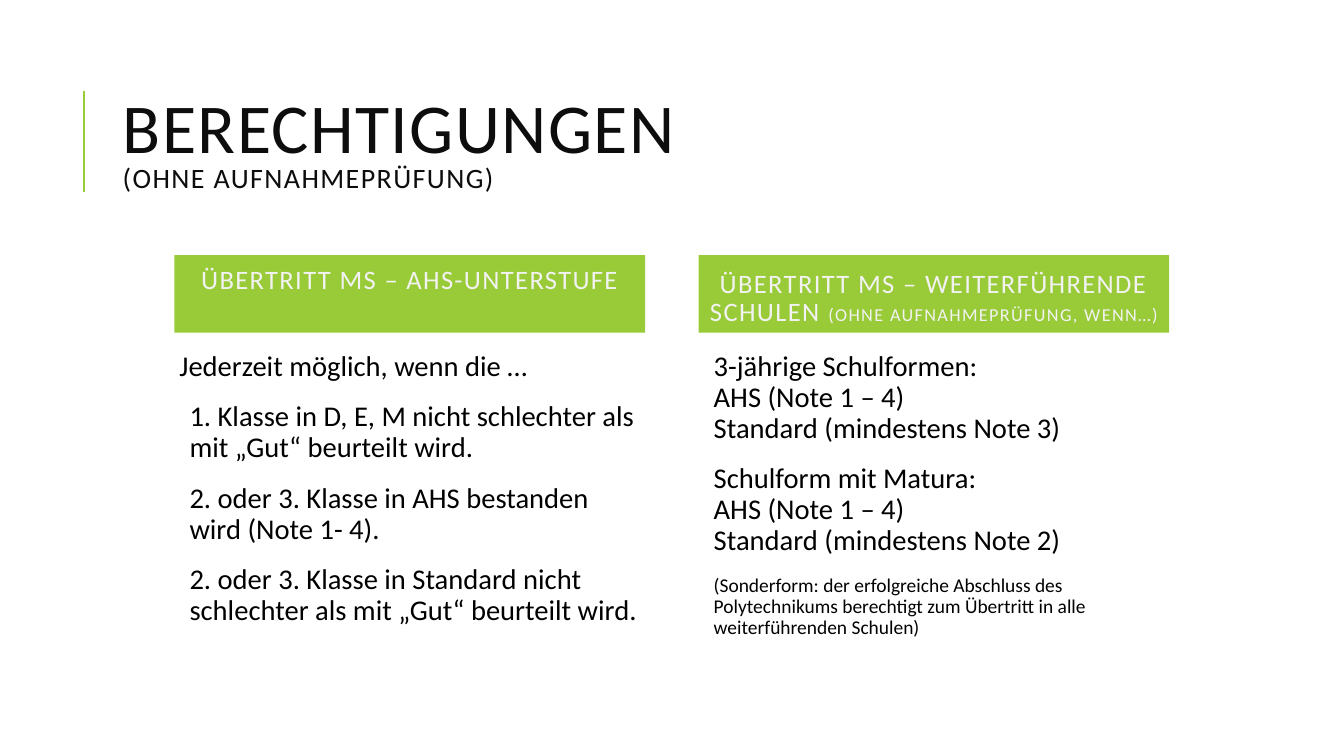
from pptx import Presentation
from pptx.dml.color import RGBColor
from pptx.enum.shapes import MSO_CONNECTOR, MSO_SHAPE
from pptx.enum.text import MSO_ANCHOR, PP_ALIGN
from pptx.oxml.ns import qn
from pptx.util import Pt

COLORS = {"green": "99CB38", "header": "F2F2F2", "title": "0D0D0D", "body": "000000"}
INSET = 3.6
HEADER_HEIGHT = 55.4
BODY_TOP = 65.5
BODY_SIZE = 20.4

ENTRY_CONDITIONS = [
    ("Jederzeit möglich, wenn die …", BODY_SIZE, 0),
    ("1. Klasse in D, E, M nicht schlechter als mit „Gut“ beurteilt wird.", BODY_SIZE, 7.2),
    ("2. oder 3. Klasse in AHS bestanden wird (Note 1- 4).", BODY_SIZE, 7.2),
    ("2. oder 3. Klasse in Standard nicht schlechter als mit „Gut“ beurteilt wird.",
     BODY_SIZE, 7.2),
]
SCHOOL_TYPES = [
    ("3-jährige Schulformen:\vAHS (Note 1 – 4)\vStandard (mindestens Note 3)", BODY_SIZE, 7.2),
    ("Schulform mit Matura:\vAHS (Note 1 – 4)\vStandard (mindestens Note 2)", BODY_SIZE, 7.2),
    ("(Sonderform: der erfolgreiche Abschluss des Polytechnikums berechtigt zum Übertritt "
     "in alle weiterführenden Schulen)", 13.9, 7.2),
]


def format_run(run, size, color, letter_spacing=0):
    run.font.name = "Calibri"
    run.font.size = Pt(size)
    run.font.color.rgb = RGBColor.from_string(COLORS[color])
    if letter_spacing:
        run.font._element.set("spc", str(letter_spacing * 100))


def set_frame(frame, anchor, side, vertical, bottom=None):
    """Wrap the text and set its anchor and insets."""
    frame.word_wrap = True
    frame.vertical_anchor = anchor
    frame.margin_left = frame.margin_right = Pt(side)
    frame.margin_top = Pt(vertical)
    frame.margin_bottom = Pt(vertical if bottom is None else bottom)


def add_title(slide, left, top, width, height):
    """Add the two-line title and the accent line to its left."""
    accent = slide.shapes.add_connector(
        MSO_CONNECTOR.STRAIGHT, Pt(left - 20.9), Pt(top + 90.7), Pt(left - 20.9), Pt(top + 18.7))
    accent.line.color.rgb = RGBColor.from_string(COLORS["green"])
    accent.line.width = Pt(1.5)
    properties = accent._element.spPr
    properties.append(properties.makeelement(qn("a:effectLst"), {}))

    box = slide.shapes.add_textbox(Pt(left), Pt(top), Pt(width), Pt(height))
    set_frame(box.text_frame, MSO_ANCHOR.MIDDLE, 7.2, 3.6)
    paragraph = box.text_frame.paragraphs[0]
    paragraph.text = "BERECHTIGUNGEN\v(OHNE AUFNAHMEPRÜFUNG)"
    paragraph.line_spacing = 0.8
    for run, size in zip(paragraph.runs, (50, 20)):
        format_run(run, size, "title", 1)


def add_header(slide, left, top, width, parts, bottom_inset):
    """Add a green header; parts are (text, size) pairs on one paragraph."""
    shape = slide.shapes.add_shape(
        MSO_SHAPE.RECTANGLE, Pt(left), Pt(top), Pt(width), Pt(HEADER_HEIGHT))
    shape.shadow.inherit = False
    shape.fill.solid()
    shape.fill.fore_color.rgb = RGBColor.from_string(COLORS["green"])
    shape.line.fill.background()
    set_frame(shape.text_frame, MSO_ANCHOR.BOTTOM, INSET, INSET, bottom_inset)
    paragraph = shape.text_frame.paragraphs[0]
    paragraph.alignment = PP_ALIGN.CENTER
    paragraph.line_spacing = 0.9
    paragraph.space_after = Pt(2)
    for text, size in parts:
        run = paragraph.add_run()
        run.text = text
        format_run(run, size, "header", 1)


def add_body(slide, left, top, width, height, entries):
    """Add the paragraphs given as (text, size, left indent)."""
    box = slide.shapes.add_textbox(Pt(left), Pt(top), Pt(width), Pt(height))
    frame = box.text_frame
    set_frame(frame, MSO_ANCHOR.TOP, INSET, INSET)
    for index, (text, size, indent) in enumerate(entries):
        paragraph = frame.add_paragraph() if index else frame.paragraphs[0]
        paragraph.text = text
        paragraph.line_spacing = 0.9
        paragraph.space_before = Pt(12 if index else 0)
        paragraph.space_after = Pt(2)
        paragraph._p.get_or_add_pPr().set("marL", str(int(Pt(indent))))
        for run in paragraph.runs:
            format_run(run, size, "body")


def add_column(slide, left, top, width, height, header_parts, entries, bottom_inset=INSET):
    add_header(slide, left, top, width, header_parts, bottom_inset)
    add_body(slide, left, top + BODY_TOP, width, height - BODY_TOP, entries)


def main():
    presentation = Presentation()
    presentation.slide_width = Pt(960)
    presentation.slide_height = Pt(540)
    slide = presentation.slides.add_slide(presentation.slide_layouts[6])
    add_title(slide, 80.6, 46.1, 765.4, 118.1)
    add_column(slide, 124.6, 182.2, 336.2, 270,
               [("ÜBERTRITT MS – AHS-UNTERSTUFE", 19)], ENTRY_CONDITIONS, bottom_inset=26.5)
    add_column(slide, 499, 182.2, 336.2, 295.9,
               [("ÜBERTRITT MS – WEITERFÜHRENDE SCHULEN ", 19),
                ("(OHNE AUFNAHMEPRÜFUNG, WENN…)", 13)], SCHOOL_TYPES)
    presentation.save("out.pptx")


if __name__ == "__main__":
    main()
